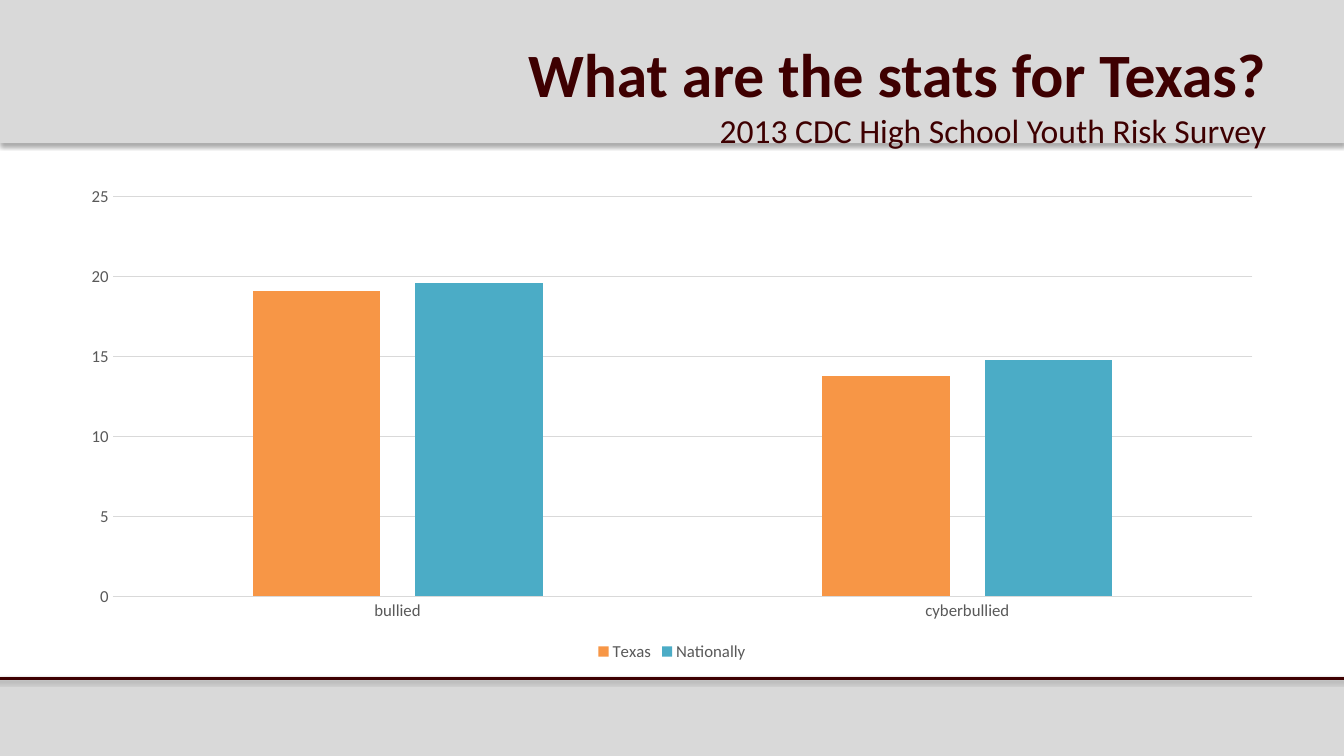
from lxml import etree
from pptx import Presentation
from pptx import util as u
from pptx.chart.data import CategoryChartData
from pptx.dml.color import RGBColor
from pptx.enum import chart as ch, shapes, text
from pptx.oxml.ns import qn

# Content
TITLE = "What are the stats for Texas?"
SUBTITLE = "2013 CDC High School Youth Risk Survey"
CATEGORIES = ["bullied", "cyberbullied"]
SERIES = [("Texas", [19.1, 13.8], "F79646"),
          ("Nationally", [19.6, 14.8], "4BACC6")]

# Style and measures (centimetres)
FONT = "Calibri"
MAROON, GREY, LABEL = "3E0001", "D9D9D9", "595959"
WIDTH, HEIGHT = 33.87, 19.05
HEADER_HEIGHT, FOOTER_TOP = 3.61, 17.09
MARGIN, OVERHANG = 1.7, 0.15
CONTENT_WIDTH = WIDTH - 2 * MARGIN


def color(code):
    return RGBColor.from_string(code)


def style(font, size, code, bold=False):
    font.name, font.size, font.bold = FONT, u.Pt(size), bold
    font.color.rgb = color(code)


def place(shape, left, top, width, height):
    shape.left, shape.top = u.Cm(left), u.Cm(top)
    shape.width, shape.height = u.Cm(width), u.Cm(height)


def add_shadow(shape, opacity, distance):
    properties = shape._element.spPr
    effects = etree.SubElement(properties, qn("a:effectLst"))
    shadow = etree.SubElement(effects, qn("a:outerShdw"), blurRad=str(u.Pt(3.1)),
                              dist=str(u.Pt(distance)), dir="5400000", rotWithShape="0")
    tint = etree.SubElement(shadow, qn("a:srgbClr"), val="000000")
    etree.SubElement(tint, qn("a:alpha"), val=str(opacity * 1000))


def add_band(page, top, height):
    band = page.shapes.add_shape(shapes.MSO_SHAPE.RECTANGLE, 0, u.Cm(top),
                                 u.Cm(WIDTH), u.Cm(height))
    band.fill.solid()
    band.fill.fore_color.rgb = color(GREY)
    band.line.fill.background()
    add_shadow(band, 35, 1.8)


deck = Presentation()
deck.slide_width, deck.slide_height = u.Cm(WIDTH), u.Cm(HEIGHT)
page = deck.slides.add_slide(deck.slide_layouts[5])

# Footer band, rule and header band
add_band(page, FOOTER_TOP, HEIGHT - FOOTER_TOP)
rule = page.shapes.add_connector(shapes.MSO_CONNECTOR.STRAIGHT,
                                 u.Cm(-OVERHANG), u.Cm(FOOTER_TOP),
                                 u.Cm(WIDTH + OVERHANG), u.Cm(FOOTER_TOP))
rule.line.color.rgb = color(MAROON)
rule.line.width = u.Pt(2)
add_shadow(rule, 38, 1.6)
add_band(page, 0, HEADER_HEIGHT)

# Title, brought in front of the bands
title = page.shapes.title
page.shapes._spTree.append(title._element)
place(title, MARGIN, 0.76, CONTENT_WIDTH, 3.18)
frame = title.text_frame
frame.word_wrap = True
frame.auto_size = text.MSO_AUTO_SIZE.NONE
frame.vertical_anchor = text.MSO_ANCHOR.MIDDLE
para = frame.paragraphs[0]
para.alignment = text.PP_ALIGN.RIGHT
span = para.add_run()
span.text = TITLE
style(span.font, 44, MAROON, bold=True)
para.add_line_break()
span = para.add_run()
span.text = SUBTITLE
style(span.font, 24, MAROON)

# Chart
data = CategoryChartData()
data.categories = CATEGORIES
for name, values, _ in SERIES:
    data.add_series(name, values)
chart = page.shapes.add_chart(ch.XL_CHART_TYPE.COLUMN_CLUSTERED, u.Cm(MARGIN), u.Cm(4.45),
                              u.Cm(CONTENT_WIDTH), u.Cm(12.32), data).chart
style(chart.font, 10, "000000")
chart.has_title = False
chart.has_legend = True
chart.legend.position = ch.XL_LEGEND_POSITION.BOTTOM
chart.legend.include_in_layout = False
style(chart.legend.font, 12, LABEL)

plot = chart.plots[0]
plot.gap_width, plot.overlap = 219, -27
plot.vary_by_categories = False
for series, (_, _, code) in zip(plot.series, SERIES):
    series.format.fill.solid()
    series.format.fill.fore_color.rgb = color(code)

# Axes
for axis in (chart.category_axis, chart.value_axis):
    axis.major_tick_mark = axis.minor_tick_mark = ch.XL_TICK_MARK.NONE
    style(axis.tick_labels.font, 12, LABEL)
chart.value_axis.minimum_scale, chart.value_axis.maximum_scale = 0, 25
chart.value_axis.major_unit = 5
chart.value_axis.format.line.fill.background()
for line in (chart.category_axis.format.line, chart.value_axis.major_gridlines.format.line):
    line.color.rgb = color(GREY)
    line.width = u.Pt(0.75)

deck.save("out.pptx")
